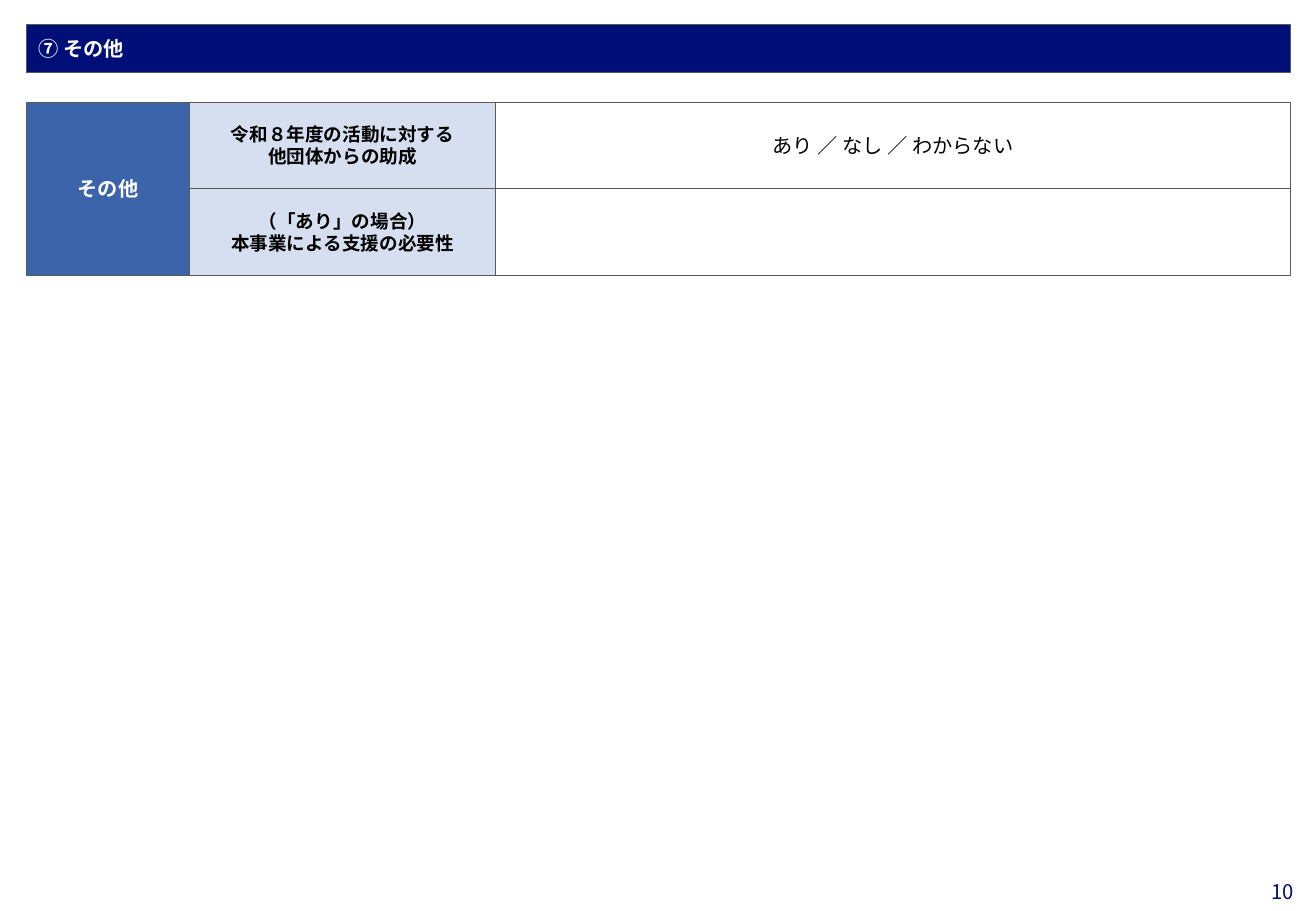
from lxml.etree import SubElement
from pptx import Presentation
from pptx.dml.color import RGBColor
from pptx.enum.shapes import MSO_SHAPE
from pptx.enum.text import MSO_ANCHOR, PP_ALIGN
from pptx.oxml.ns import qn
from pptx.util import Inches, Pt

# Content
HEADING = "⑦ その他"
CATEGORY = "その他"
ROWS = [
    (["令和８年度の活動に対する", "他団体からの助成"], ["あり ／ なし ／ わからない"]),
    (["（「あり」の場合）", "本事業による支援の必要性"], []),
]
PAGE_NUMBER = "10"

# Style and grid, in inches
FONT = "Noto Sans CJK JP"
NAVY, BLUE, PALE = "000F78", "3C64AA", "D6DFF0"
WHITE, BLACK, GRAY = "FFFFFF", "000000", "595959"
WIDTH, HEIGHT = 10.83, 7.5
LEFT, HEADING_TOP, HEADING_HEIGHT = 0.22, 0.2, 0.4
GRID_TOP, ROW_HEIGHT = 0.84, 0.715
COLUMNS = [1.34, 2.52, 6.54]
COLUMN_LEFTS = [LEFT + sum(COLUMNS[:index]) for index in range(len(COLUMNS))]


def color(value):
    return RGBColor.from_string(value)


def write(shape, lines, size=12, ink=BLACK, bold=False, align=PP_ALIGN.CENTER, spacing=None):
    frame = shape.text_frame
    frame.word_wrap = True
    frame.vertical_anchor = MSO_ANCHOR.MIDDLE
    for index, line in enumerate(lines):
        paragraph = frame.add_paragraph() if index else frame.paragraphs[0]
        paragraph.alignment = align
        if spacing:
            paragraph.line_spacing = Pt(spacing)
        run = paragraph.add_run()
        run.text = line
        run.font.size = Pt(size)
        run.font.bold = bold
        run.font.color.rgb = color(ink)
        run.font.name = FONT
        SubElement(run.font._element, qn("a:ea"), typeface=FONT)


def add_cell(shapes, left, top, width, height, fill, lines, **text_format):
    shape = shapes.add_shape(MSO_SHAPE.RECTANGLE, *map(Inches, (left, top, width, height)))
    shape.shadow.inherit = False
    shape.fill.solid()
    shape.fill.fore_color.rgb = color(fill)
    shape.line.color.rgb = color(GRAY)
    shape.line.width = Pt(0.5)
    write(shape, lines, **text_format)


presentation = Presentation()
presentation.slide_width, presentation.slide_height = Inches(WIDTH), Inches(HEIGHT)
slide = presentation.slides.add_slide(presentation.slide_layouts[6])

# Page number in the bottom right corner
number_width, number_height = 0.53, 0.19
number_box = slide.shapes.add_textbox(
    Inches(WIDTH - number_width), Inches(7.24), Inches(number_width), Inches(number_height))
frame = number_box.text_frame
frame.margin_left = frame.margin_top = frame.margin_bottom = 0
frame.margin_right = Inches(0.18)
write(number_box, [PAGE_NUMBER], ink=NAVY, align=PP_ALIGN.RIGHT)

# Heading bar
add_cell(slide.shapes, LEFT, HEADING_TOP, sum(COLUMNS), HEADING_HEIGHT, NAVY, [HEADING],
         ink=WHITE, bold=True, align=PP_ALIGN.LEFT)

# Form: category, then a label and an answer on each row
form = slide.shapes.add_group_shape().shapes
add_cell(form, COLUMN_LEFTS[0], GRID_TOP, COLUMNS[0], ROW_HEIGHT * len(ROWS), BLUE, [CATEGORY],
         ink=WHITE, bold=True)
for index, (label, answer) in enumerate(ROWS):
    top = GRID_TOP + index * ROW_HEIGHT
    add_cell(form, COLUMN_LEFTS[1], top, COLUMNS[1], ROW_HEIGHT, PALE, label,
             size=11, bold=True, spacing=13)
    add_cell(form, COLUMN_LEFTS[2], top, COLUMNS[2], ROW_HEIGHT, WHITE, answer)

presentation.save("out.pptx")
